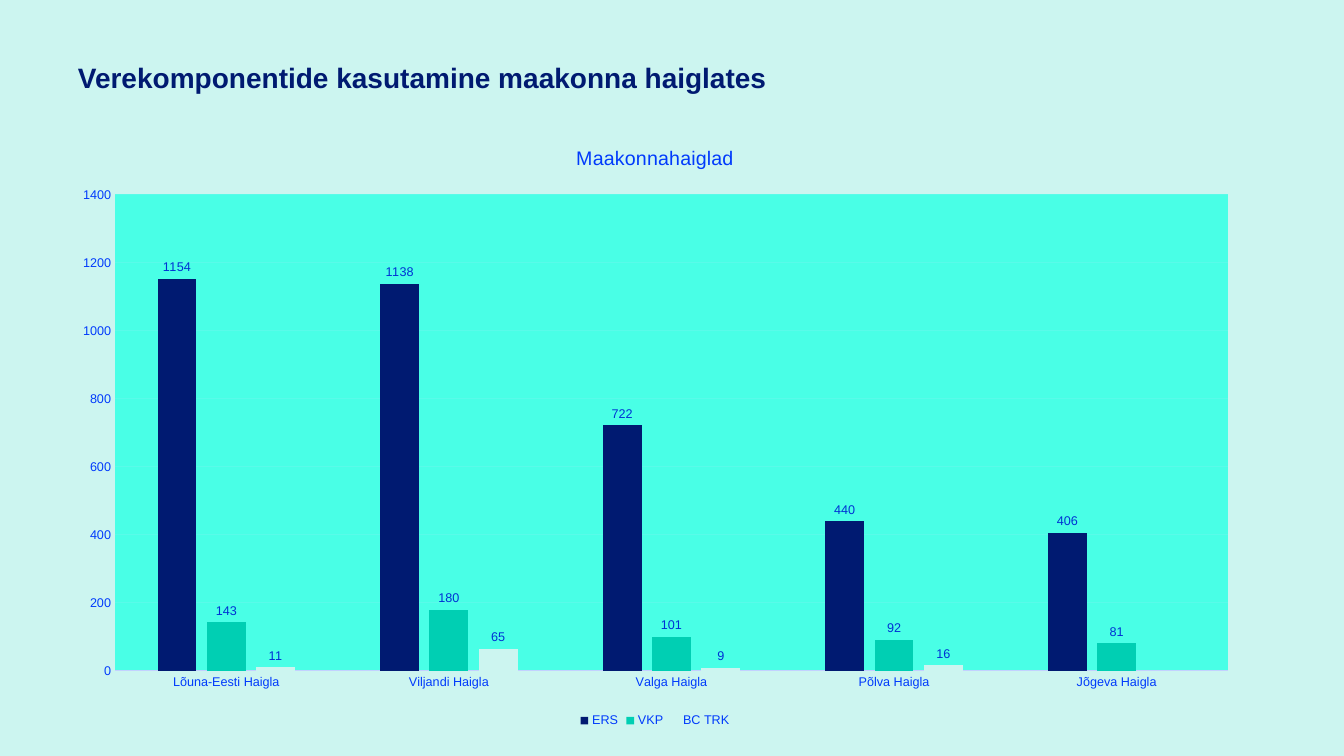
from lxml.etree import SubElement
from pptx import Presentation
from pptx.chart.data import CategoryChartData
from pptx.dml.color import RGBColor
from pptx.enum.chart import XL_CHART_TYPE as ChartType
from pptx.enum.chart import XL_LABEL_POSITION as LabelPosition
from pptx.enum.chart import XL_LEGEND_POSITION as LegendPosition
from pptx.enum.chart import XL_TICK_MARK as TickMark
from pptx.enum.text import MSO_ANCHOR as Anchor
from pptx.oxml.ns import qn
from pptx.util import Pt

EMU_PER_PX = 914400 / 100.8
FONT = "Arial"
COLORS = {
    "background": "CCF5F0",
    "navy": "001A71",
    "teal": "00CFB3",
    "plot": "49FFE6",
    "axis_text": "003AFC",
    "label_text": "0031D4",
    "axis_line": "C3D1FF",
    "grid": "59FBE9",
}
HOSPITALS = ["Lõuna-Eesti Haigla", "Viljandi Haigla", "Valga Haigla",
             "Põlva Haigla", "Jõgeva Haigla"]
COMPONENTS = [
    ("ERS", "navy", [1154, 1138, 722, 440, 406]),
    ("VKP", "teal", [143, 180, 101, 92, 81]),
    ("BC TRK", "background", [11, 65, 9, 16, None]),
]


def px(*lengths):
    """Turn pixel lengths into EMU."""
    return [round(length * EMU_PER_PX) for length in lengths]


def color(name):
    """Look up a colour by name."""
    return RGBColor.from_string(COLORS[name])


def paint(fill, name):
    """Give a fill one solid colour."""
    fill.solid()
    fill.fore_color.rgb = color(name)


def style_font(font, size, name, bold=False):
    """Set face, size, colour and weight of a font."""
    font.name = FONT
    font.size = Pt(size)
    font.bold = bold
    font.color.rgb = color(name)


def style_line(line, name):
    """Set a thin line of one colour."""
    line.width = Pt(0.75)
    line.color.rgb = color(name)


def add_heading(slide, box, text):
    """Add the slide heading at the top of its box."""
    frame = slide.shapes.add_textbox(*px(*box)).text_frame
    frame.word_wrap = True
    frame.vertical_anchor = Anchor.TOP
    paragraph = frame.paragraphs[0]
    paragraph.text = text
    paragraph.line_spacing = 0.9
    style_font(paragraph.font, 20, "navy", bold=True)


def format_plot_area(chart, box, plot_box):
    """Fill the plot area and fix its place inside the chart box."""
    area = chart.plots[0]._element.getparent()
    for old_layout in area.findall(qn("c:layout")):
        area.remove(old_layout)
    layout = SubElement(area, qn("c:layout"))
    area.insert(0, layout)
    manual = SubElement(layout, qn("c:manualLayout"))
    left, top, width, height = box
    settings = [
        ("layoutTarget", "inner"), ("xMode", "edge"), ("yMode", "edge"),
        ("x", plot_box[0] / width), ("y", plot_box[1] / height),
        ("w", plot_box[2] / width), ("h", plot_box[3] / height),
    ]
    for tag, value in settings:
        SubElement(manual, qn(f"c:{tag}")).set("val", str(value))
    properties = SubElement(area, qn("c:spPr"))
    solid = SubElement(properties, qn("a:solidFill"))
    SubElement(solid, qn("a:srgbClr")).set("val", COLORS["plot"])


def format_axes(chart):
    """Style both axes and the gridlines."""
    for axis in (chart.category_axis, chart.value_axis):
        axis.major_tick_mark = TickMark.NONE
        axis.minor_tick_mark = TickMark.NONE
        style_font(axis.tick_labels.font, 9, "axis_text")
    style_line(chart.category_axis.format.line, "axis_line")
    values = chart.value_axis
    values.minimum_scale, values.maximum_scale, values.major_unit = 0, 1400, 200
    values.format.line.fill.background()
    values.has_major_gridlines = True
    style_line(values.major_gridlines.format.line, "grid")


def format_series(plot):
    """Colour the columns and show their values above them."""
    plot.gap_width = 219
    plot.overlap = -27
    plot.vary_by_categories = False
    for series, (_, fill_name, _) in zip(plot.series, COMPONENTS):
        paint(series.format.fill, fill_name)
        series.invert_if_negative = False
        labels = series.data_labels
        labels.show_value = True
        labels.position = LabelPosition.OUTSIDE_END
        style_font(labels.font, 9, "label_text")


def add_usage_chart(slide, box, title):
    """Add the column chart of blood components used per hospital."""
    data = CategoryChartData()
    data.categories = HOSPITALS
    for name, _, values in COMPONENTS:
        data.add_series(name, values)
    frame = slide.shapes.add_chart(ChartType.COLUMN_CLUSTERED, *px(*box), data)
    chart = frame.chart
    style_font(chart.font, 10, "navy")
    chart.has_title = True
    paragraph = chart.chart_title.text_frame.paragraphs[0]
    paragraph.text = title
    style_font(paragraph.font, 14, "axis_text")
    chart.chart_title.include_in_layout = False
    chart.has_legend = True
    chart.legend.position = LegendPosition.BOTTOM
    chart.legend.include_in_layout = False
    style_font(chart.legend.font, 9, "axis_text")
    format_axes(chart)
    format_series(chart.plots[0])
    format_plot_area(chart, box, (56, 71, 1113, 476))


def main():
    """Build the slide and save it."""
    presentation = Presentation()
    presentation.slide_width, presentation.slide_height = px(1344, 756)
    slide = presentation.slides.add_slide(presentation.slide_layouts[6])
    paint(slide.background.fill, "background")
    add_heading(slide, (68, 59, 1183, 146),
                "Verekomponentide kasutamine maakonna haiglates")
    add_usage_chart(slide, (59, 124, 1192, 608), "Maakonnahaiglad")
    presentation.save("out.pptx")


if __name__ == "__main__":
    main()
